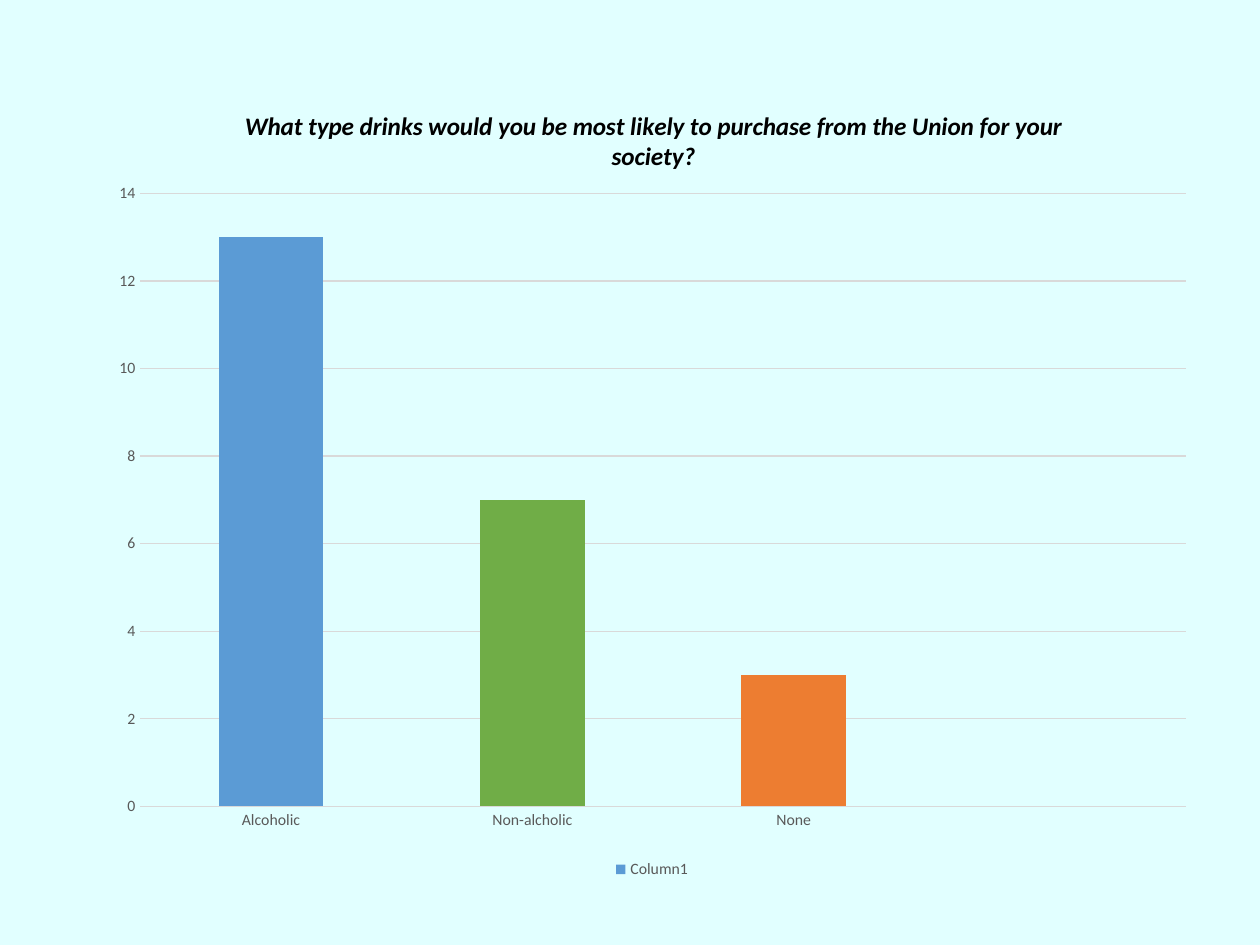
from dataclasses import dataclass
from typing import Optional

from lxml import etree
from pptx import Presentation
from pptx import util as u
from pptx.chart.data import CategoryChartData
from pptx.dml.color import RGBColor
from pptx.enum import chart as charts
from pptx.oxml import ns

BACKGROUND = RGBColor(0xE1, 0xFF, 0xFF)
BLACK = RGBColor(0, 0, 0)
LABEL_GREY = RGBColor(0x59, 0x59, 0x59)
GRID_GREY = RGBColor(0xD9, 0xD9, 0xD9)
BLUE = RGBColor(0x5B, 0x9B, 0xD5)
GREEN = RGBColor(0x70, 0xAD, 0x47)
ORANGE = RGBColor(0xED, 0x7D, 0x31)

FONT = "Calibri"
SLIDE_WIDTH = u.Inches(10)
SLIDE_HEIGHT = u.Inches(7.5)
TITLE = "What type drinks would you be most likely to purchase from the Union for your society?"


@dataclass(frozen=True)
class Bar:
    label: str
    votes: Optional[int]
    color: RGBColor


BARS = (
    Bar("Alcoholic", 13, BLUE),
    Bar("Non-alcholic", 7, GREEN),
    Bar("None", 3, ORANGE),
    Bar("", None, BLUE),
)


def style_font(font, size: float, color: RGBColor) -> None:
    font.name = FONT
    font.size = u.Pt(size)
    font.color.rgb = color


def style_line(line) -> None:
    line.color.rgb = GRID_GREY
    line.width = u.Pt(0.75)


def place(parent, index: int, inner: bool = False, **shares: float) -> None:
    for layout in parent.findall(ns.qn("c:layout")):
        parent.remove(layout)
    layout = etree.Element(ns.qn("c:layout"))
    manual = etree.SubElement(layout, ns.qn("c:manualLayout"))
    settings = {"layoutTarget": "inner"} if inner else {}
    settings.update(xMode="edge", yMode="edge", **shares)
    for name, value in settings.items():
        etree.SubElement(manual, ns.qn(f"c:{name}")).set("val", str(value))
    parent.insert(index, layout)


def add_votes_chart(slide):
    data = CategoryChartData()
    data.categories = [bar.label for bar in BARS]
    data.add_series("Column1", [bar.votes for bar in BARS])
    frame = slide.shapes.add_chart(
        charts.XL_CHART_TYPE.COLUMN_STACKED,
        int(SLIDE_WIDTH * 0.076), int(SLIDE_HEIGHT * 0.076),
        int(SLIDE_WIDTH * 0.883), int(SLIDE_HEIGHT * 0.859), data,
    )
    chart = frame.chart
    style_font(chart.font, 10, BLACK)
    return chart


def style_bars(chart) -> None:
    plot = chart.plots[0]
    plot.gap_width = 150
    plot.overlap = 100
    plot.vary_by_categories = False
    series = plot.series[0]
    series.format.fill.solid()
    series.format.fill.fore_color.rgb = BLUE
    for index, bar in enumerate(BARS):
        if bar.color != BLUE:
            fill = series.points[index].format.fill
            fill.solid()
            fill.fore_color.rgb = bar.color


def style_axes(chart) -> None:
    for axis in (chart.category_axis, chart.value_axis):
        axis.major_tick_mark = charts.XL_TICK_MARK.NONE
        axis.minor_tick_mark = charts.XL_TICK_MARK.NONE
        style_font(axis.tick_labels.font, 9, LABEL_GREY)
    style_line(chart.category_axis.format.line)
    values = chart.value_axis
    values.minimum_scale, values.maximum_scale, values.major_unit = 0, 14, 2
    values.format.line.fill.background()
    values.has_major_gridlines = True
    style_line(values.major_gridlines.format.line)


def add_title_and_legend(chart) -> None:
    chart.has_title = True
    title = chart.chart_title
    title.include_in_layout = False
    run = title.text_frame.paragraphs[0].add_run()
    run.text = TITLE
    style_font(run.font, 14.4, BLACK)
    run.font.bold = True
    run.font.italic = True
    place(title._element, 1, x=0.13, y=0.04)

    chart.has_legend = True
    chart.legend.position = charts.XL_LEGEND_POSITION.BOTTOM
    chart.legend.include_in_layout = False
    style_font(chart.legend.font, 9, LABEL_GREY)


def main() -> None:
    presentation = Presentation()
    presentation.slide_width = SLIDE_WIDTH
    presentation.slide_height = SLIDE_HEIGHT
    slide = presentation.slides.add_slide(presentation.slide_layouts[6])
    slide.background.fill.solid()
    slide.background.fill.fore_color.rgb = BACKGROUND

    chart = add_votes_chart(slide)
    style_bars(chart)
    style_axes(chart)
    add_title_and_legend(chart)
    plot_area = chart._chartSpace.chart.plotArea
    place(plot_area, 0, inner=True, x=0.04, y=0.15, w=0.94, h=0.755)
    presentation.save("out.pptx")


if __name__ == "__main__":
    main()
